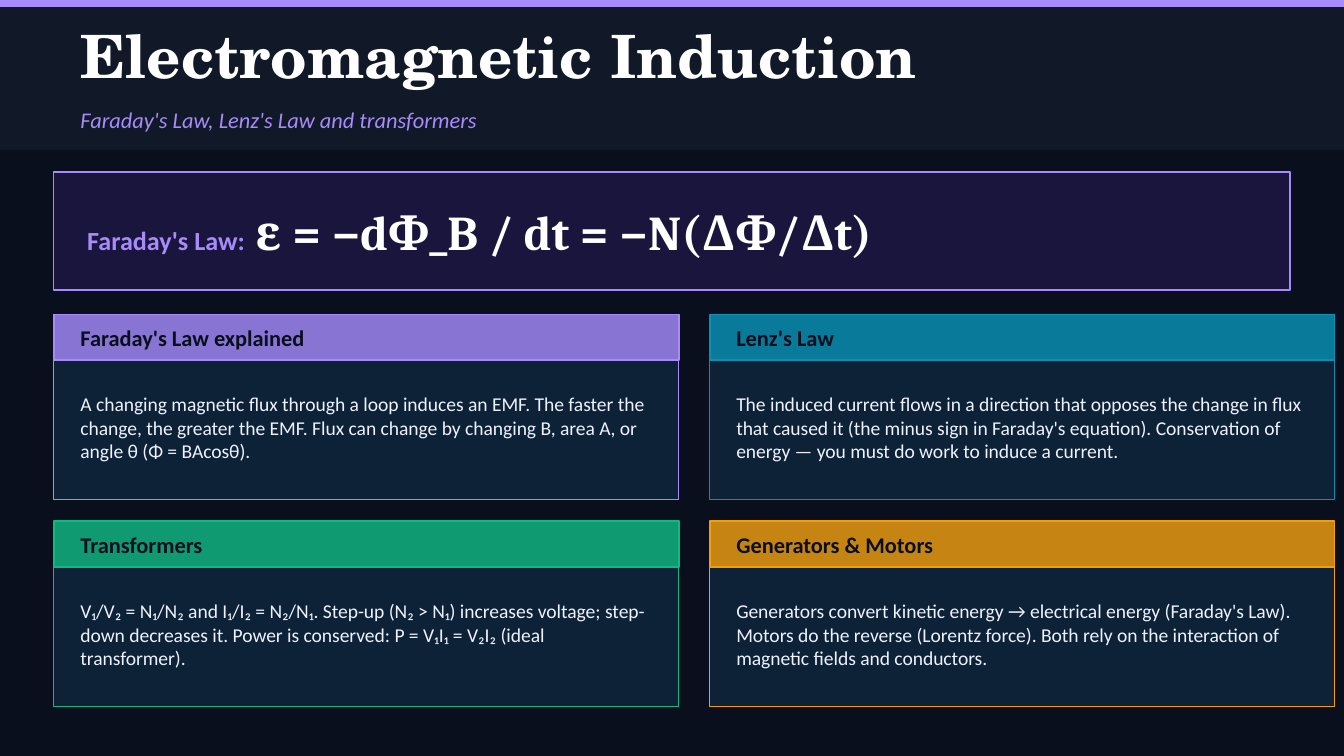
import pptx
import pptx.dml.color
import pptx.enum.shapes
import pptx.enum.text
import pptx.oxml
import pptx.oxml.ns
import pptx.util
from pptx.util import Inches

BACKGROUND = "0A0F1E"
HEADER = "111827"
VIOLET = "A78BFA"
WHITE = "FFFFFF"
CARD_FILL = "0D2137"
BODY_TEXT = "EEF2FF"


def add_box(left, top, width, height, fill, line, line_width=1, opacity=100):
    """Add a rectangle; opacity is the fill's percentage."""
    shape = slide.shapes.add_shape(
        pptx.enum.shapes.MSO_SHAPE.RECTANGLE,
        Inches(left), Inches(top), Inches(width), Inches(height))
    shape.shadow.inherit = False
    shape.fill.solid()
    shape.fill.fore_color.rgb = pptx.dml.color.RGBColor.from_string(fill)
    shape.line.color.rgb = pptx.dml.color.RGBColor.from_string(line)
    shape.line.width = pptx.util.Pt(line_width)
    if opacity < 100:
        color = shape.element.spPr.find(pptx.oxml.ns.qn("a:solidFill"))[0]
        alpha = pptx.oxml.parse_xml(
            f'<a:alpha {pptx.oxml.ns.nsdecls("a")} val="{opacity * 1000}"/>')
        color.append(alpha)


def add_text(left, top, width, height, *runs):
    """Add a one-paragraph box; a run is (text, size, font, color, bold, italic)."""
    box = slide.shapes.add_textbox(
        Inches(left), Inches(top), Inches(width), Inches(height))
    frame = box.text_frame
    frame.word_wrap = True
    frame.vertical_anchor = pptx.enum.text.MSO_ANCHOR.MIDDLE
    paragraph = frame.paragraphs[0]
    for text, size, font, color, bold, italic in runs:
        run = paragraph.add_run()
        run.text = text
        run.font.size = pptx.util.Pt(size)
        run.font.name = font
        run.font.color.rgb = pptx.dml.color.RGBColor.from_string(color)
        run.font.bold = bold
        run.font.italic = italic


# Widescreen page, 16:9
presentation = pptx.Presentation()
presentation.slide_width = Inches(10)
presentation.slide_height = Inches(10 * 9 / 16)
slide = presentation.slides.add_slide(presentation.slide_layouts[6])
slide.background.fill.solid()
slide.background.fill.fore_color.rgb = pptx.dml.color.RGBColor.from_string(BACKGROUND)

# Header
add_box(0, 0, 10, 0.06, VIOLET, VIOLET)
add_box(0, 0.06, 10, 1.05, HEADER, HEADER)
add_text(0.5, 0.1, 9, 0.62,
         ("Electromagnetic Induction", 32, "TeX Gyre Schola", WHITE, True, False))
add_text(0.5, 0.74, 7, 0.3,
         ("Faraday's Law, Lenz's Law and transformers", 12, "Calibri", VIOLET, False, True))

# Formula banner
add_box(0.4, 1.28, 9.2, 0.88, "7C3AED", VIOLET, 0.8, opacity=15)
add_text(0.55, 1.28, 9, 0.88,
         ("Faraday's Law:", 14, "Calibri", VIOLET, True, False),
         (" ε = −dΦ_B / dt = −N(ΔΦ/Δt)", 26, "Cambria", WHITE, True, False))

# Two-by-two grid of cards
cards = [
    ("Faraday's Law explained", VIOLET,
     "A changing magnetic flux through a loop induces an EMF. The faster the change, "
     "the greater the EMF. Flux can change by changing B, area A, or angle θ (Φ = BAcosθ)."),
    ("Lenz's Law", "0891B2",
     "The induced current flows in a direction that opposes the change in flux that "
     "caused it (the minus sign in Faraday's equation). Conservation of energy — you "
     "must do work to induce a current."),
    ("Transformers", "10B981",
     "V₁/V₂ = N₁/N₂ and I₁/I₂ = N₂/N₁. Step-up (N₂ > N₁) increases voltage; step-down "
     "decreases it. Power is conserved: P = V₁I₁ = V₂I₂ (ideal transformer)."),
    ("Generators & Motors", "F59E0B",
     "Generators convert kinetic energy → electrical energy (Faraday's Law). Motors do "
     "the reverse (Lorentz force). Both rely on the interaction of magnetic fields and "
     "conductors."),
]
for index, (heading, accent, body) in enumerate(cards):
    row, column = divmod(index, 2)
    left = 0.4 + column * 4.88
    top = 2.34 + row * 1.54
    add_box(left, top, 4.65, 1.38, CARD_FILL, accent, 0.5)
    add_box(left, top, 4.65, 0.34, accent, accent, opacity=80)
    add_text(left + 0.1, top, 4.45, 0.34,
             (heading, 12, "Calibri", BACKGROUND, True, False))
    add_text(left + 0.1, top + 0.4, 4.45, 0.88,
             (body, 10.5, "Calibri", BODY_TEXT, False, False))

presentation.save("out.pptx")
